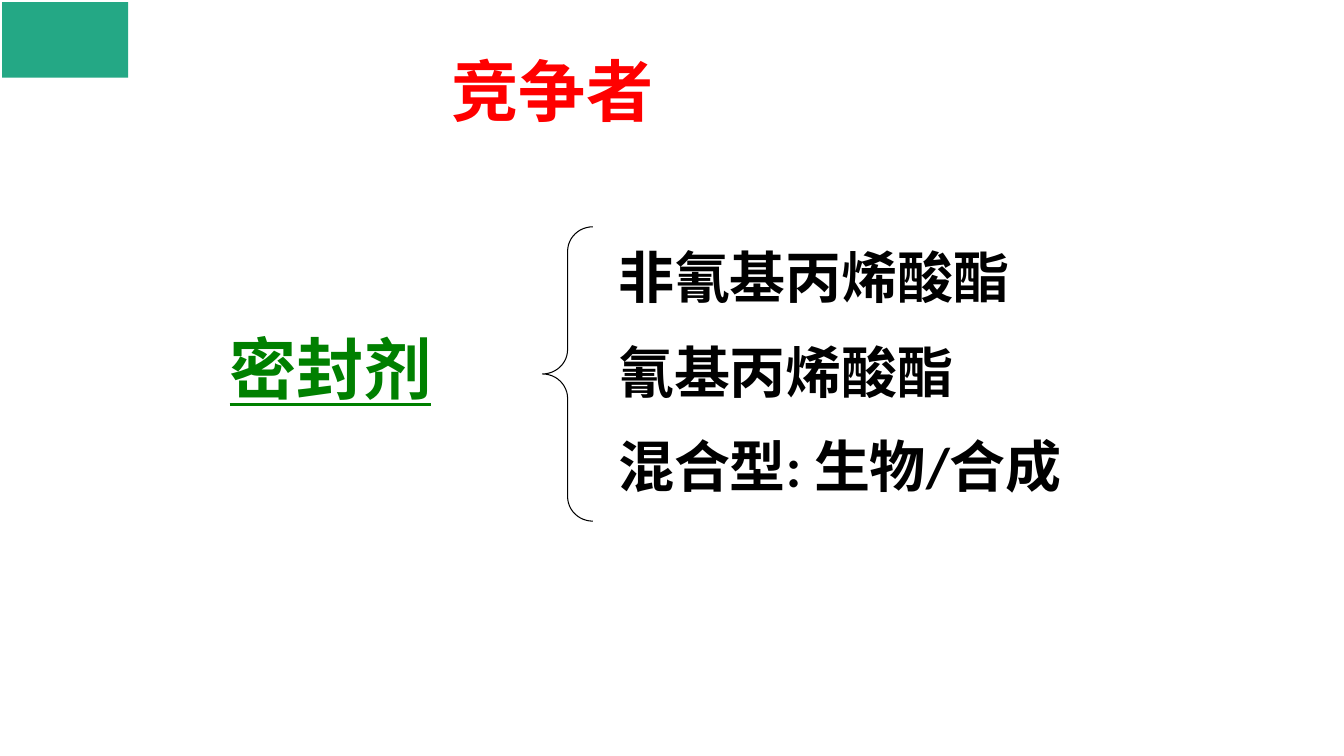
from pptx import Presentation
from pptx.dml.color import RGBColor
from pptx.enum.shapes import MSO_SHAPE as Shape
from pptx.enum.text import MSO_ANCHOR as Anchor, MSO_AUTO_SIZE as AutoSize, PP_ALIGN as Align
from pptx.util import Inches, Pt


def color(hex_string):
    return RGBColor.from_string(hex_string)


def write(shape, box, lines, size, hex_string, underline=False, gap=0):
    """Place a text shape and fill it with one paragraph per line."""
    shape.left, shape.top, shape.width, shape.height = map(Inches, box)
    frame = shape.text_frame
    frame.text = "\n".join(lines)
    frame.word_wrap = True
    frame.auto_size = AutoSize.NONE
    frame.vertical_anchor = Anchor.TOP
    for paragraph in frame.paragraphs:
        paragraph.alignment = Align.LEFT
        paragraph.space_before = Pt(0)
        paragraph.space_after = Pt(gap)
        font = paragraph.font
        font.name, font.size, font.bold, font.underline = "Calibri", Pt(size), True, underline
        font.color.rgb = color(hex_string)


presentation = Presentation()
presentation.slide_width = Inches(13.33)
presentation.slide_height = Inches(7.5)
slide = presentation.slides.add_slide(presentation.slide_layouts[1])
shapes = slide.shapes

# Plain corner block
block = shapes.add_shape(Shape.RECTANGLE, Inches(0.02), Inches(0.02), Inches(1.25), Inches(0.75))
block.shadow.inherit = False
block.fill.solid()
block.fill.fore_color.rgb = color("24A885")
block.line.fill.background()

# Title
write(shapes.title, (4.38, 0.44, 5, 0.9), ["竞争者"], 48, "FF0000")

# Category and its brace
write(shapes.add_textbox(0, 0, 0, 0), (2.18, 3.2, 2.99, 0.91), ["密封剂"], 48, "008000",
      underline=True)
brace = shapes.add_shape(Shape.LEFT_BRACE, Inches(5.38), Inches(2.25), Inches(0.5), Inches(2.92))
brace.shadow.inherit = False
brace.adjustments[0] = 0.486
brace.fill.background()
brace.line.color.rgb = color("000000")
brace.line.width = Pt(0.75)

# Kinds of sealant, as an unbulleted list
kinds = slide.placeholders[1]
write(kinds, (6.03, 2.36, 4.67, 3.3), ["非氰基丙烯酸酯", "氰基丙烯酸酯", "混合型: 生物/合成"],
      40, "000000", gap=19.5)
for paragraph in kinds.text_frame.paragraphs:
    properties = paragraph._p.get_or_add_pPr()
    properties.set("marL", "0")
    properties.set("indent", "0")
    properties.append(properties.makeelement(
        "{http://schemas.openxmlformats.org/drawingml/2006/main}buNone", {}))
    # Bullet settings come before the default run properties
    properties.append(properties.defRPr)

presentation.save("out.pptx")
